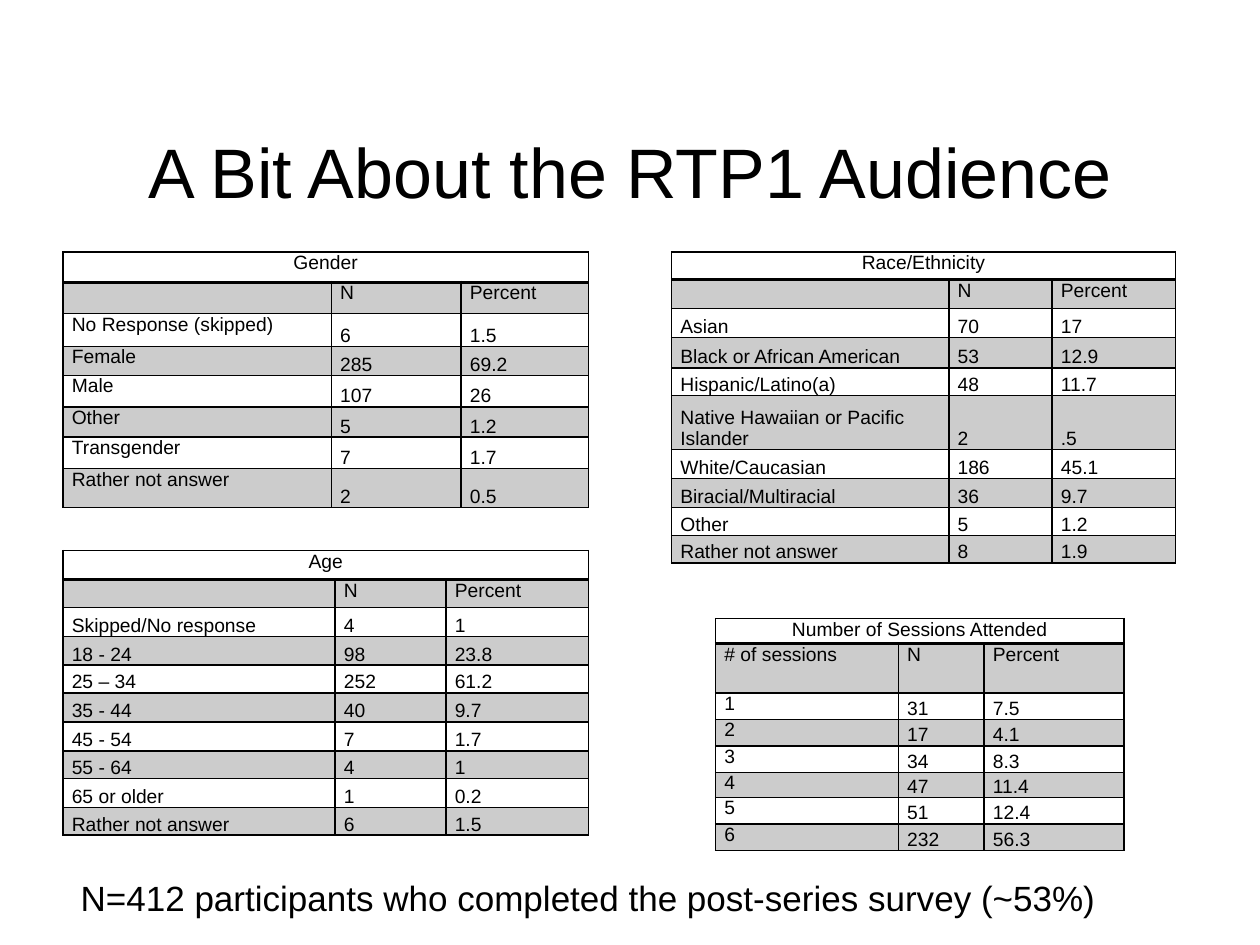
from lxml import etree
from pptx import Presentation
from pptx.dml.color import RGBColor
from pptx.enum.text import MSO_ANCHOR, PP_ALIGN
from pptx.oxml.ns import qn
from pptx.util import Inches, Pt

BLACK = RGBColor(0x00, 0x00, 0x00)
FONT = "Arial"
LEFT, CENTER = PP_ALIGN.LEFT, PP_ALIGN.CENTER
TOP, BOTTOM = MSO_ANCHOR.TOP, MSO_ANCHOR.BOTTOM
TABLE_SIZE = 11
SHADE_PERCENT = 20
HEADINGS = ("", "N", "Percent")

TABLES = [
    dict(
        title="Gender", place=(0.5, 2), label_anchor=TOP,
        widths=(2.13, 1.03, 1.01),
        heights=(0.24, 0.25, 0.26, 0.23, 0.25, 0.24, 0.25, 0.31),
        rows=[
            HEADINGS,
            ("No Response (skipped)", "6", "1.5"),
            ("Female", "285", "69.2"),
            ("Male", "107", "26"),
            ("Other", "5", "1.2"),
            ("Transgender", "7", "1.7"),
            ("Rather not answer", "2", "0.5"),
        ],
    ),
    dict(
        title="Race/Ethnicity", place=(5.33, 2), label_anchor=BOTTOM,
        widths=(2.2, 0.82, 0.98),
        heights=(0.22, 0.23, 0.23, 0.24, 0.22, 0.43, 0.23, 0.23, 0.22, 0.22),
        rows=[
            HEADINGS,
            ("Asian", "70", "17"),
            ("Black or African American", "53", "12.9"),
            ("Hispanic/Latino(a)", "48", "11.7"),
            ("Native Hawaiian or Pacific Islander", "2", ".5"),
            ("White/Caucasian", "186", "45.1"),
            ("Biracial/Multiracial", "36", "9.7"),
            ("Other", "5", "1.2"),
            ("Rather not answer", "8", "1.9"),
        ],
    ),
    dict(
        title="Age", place=(0.5, 4.37), label_anchor=BOTTOM,
        widths=(2.16, 0.88, 1.13),
        heights=(0.23, 0.22, 0.23, 0.23, 0.22, 0.23, 0.23, 0.22, 0.23, 0.22),
        rows=[
            HEADINGS,
            ("Skipped/No response", "4", "1"),
            ("18 - 24", "98", "23.8"),
            ("25 – 34", "252", "61.2"),
            ("35 - 44", "40", "9.7"),
            ("45 - 54", "7", "1.7"),
            ("55 - 64", "4", "1"),
            ("65 or older", "1", "0.2"),
            ("Rather not answer", "6", "1.5"),
        ],
    ),
    dict(
        title="Number of Sessions Attended", place=(5.68, 4.91), label_anchor=TOP,
        widths=(1.45, 0.68, 1.11),
        heights=(0.2, 0.39, 0.21, 0.21, 0.21, 0.2, 0.21, 0.21),
        rows=[
            ("# of sessions", "N", "Percent"),
            ("1", "31", "7.5"),
            ("2", "17", "4.1"),
            ("3", "34", "8.3"),
            ("4", "47", "11.4"),
            ("5", "51", "12.4"),
            ("6", "232", "56.3"),
        ],
    ),
]


def write(frame, text, size, align):
    para = frame.paragraphs[0]
    para.alignment = align
    if text:
        span = para.add_run()
        span.text = text
        span.font.color.rgb = BLACK
        for name, value in dict(name=FONT, size=Pt(size)).items():
            setattr(span.font, name, value)
    else:
        # keeps an empty cell from growing to the default text size
        etree.SubElement(para._p, qn("a:endParaRPr"), sz=str(size * 100))


def add_text(slide, place, text, size, **frame_format):
    box = slide.shapes.add_textbox(*map(Inches, place))
    for name, value in frame_format.items():
        setattr(box.text_frame, name, value)
    write(box.text_frame, text, size, CENTER)


def set_borders(cell, top, bottom):
    """Draw black cell edges; top and bottom are widths in points."""
    properties = cell._tc.get_or_add_tcPr()
    for side, width in dict(L=1, R=1, T=top, B=bottom).items():
        line = etree.SubElement(properties, qn(f"a:ln{side}"), w=str(Pt(width)))
        fill = etree.SubElement(line, qn("a:solidFill"))
        etree.SubElement(fill, qn("a:srgbClr"), val=str(BLACK))


def shade(cell):
    cell.fill.solid()
    cell.fill.fore_color.rgb = BLACK
    color = cell._tc.tcPr.find(f"{qn('a:solidFill')}/{qn('a:srgbClr')}")
    etree.SubElement(color, qn("a:alpha"), val=str(SHADE_PERCENT * 1000))


def format_cell(cell, row, anchor):
    cell_format = dict(
        margin_left=Inches(0.07), margin_right=Inches(0.07),
        margin_top=0, margin_bottom=0, vertical_anchor=anchor,
    )
    for name, value in cell_format.items():
        setattr(cell, name, value)
    set_borders(cell, top=2 if row == 1 else 1, bottom=2 if row == 0 else 1)
    if row % 2:
        shade(cell)
    else:
        cell.fill.background()


def add_survey_table(slide, title, place, label_anchor, widths, heights, rows):
    size = (sum(widths), sum(heights))
    table = slide.shapes.add_table(
        len(heights), len(widths), *map(Inches, place + size)
    ).table
    table.first_row = table.horz_banding = False
    for column, width in zip(table.columns, widths):
        column.width = Inches(width)
    for table_row, height in zip(table.rows, heights):
        table_row.height = Inches(height)

    for row, texts in enumerate([(title, "", "")] + rows):
        for column, text in enumerate(texts):
            cell = table.cell(row, column)
            body_anchor = BOTTOM if column else label_anchor
            format_cell(cell, row, body_anchor if row > 1 else TOP)
            write(cell.text_frame, text, TABLE_SIZE, LEFT if row else CENTER)
    table.cell(0, 0).merge(table.cell(0, len(widths) - 1))


def main():
    deck = Presentation()
    deck.slide_width, deck.slide_height = Inches(10), Inches(7.5)
    slide = deck.slides.add_slide(deck.slide_layouts[6])
    add_text(slide, (0.5, 0.92, 9, 1.08), "A Bit About the RTP1 Audience", 40,
             word_wrap=True, margin_top=Inches(0.1))
    for survey_table in TABLES:
        add_survey_table(slide, **survey_table)
    add_text(slide, (0.51, 6.91, 8.32, 0.44),
             "N=412 participants who completed the post-series survey (~53%)", 20,
             word_wrap=False)
    deck.save("out.pptx")


if __name__ == "__main__":
    main()
